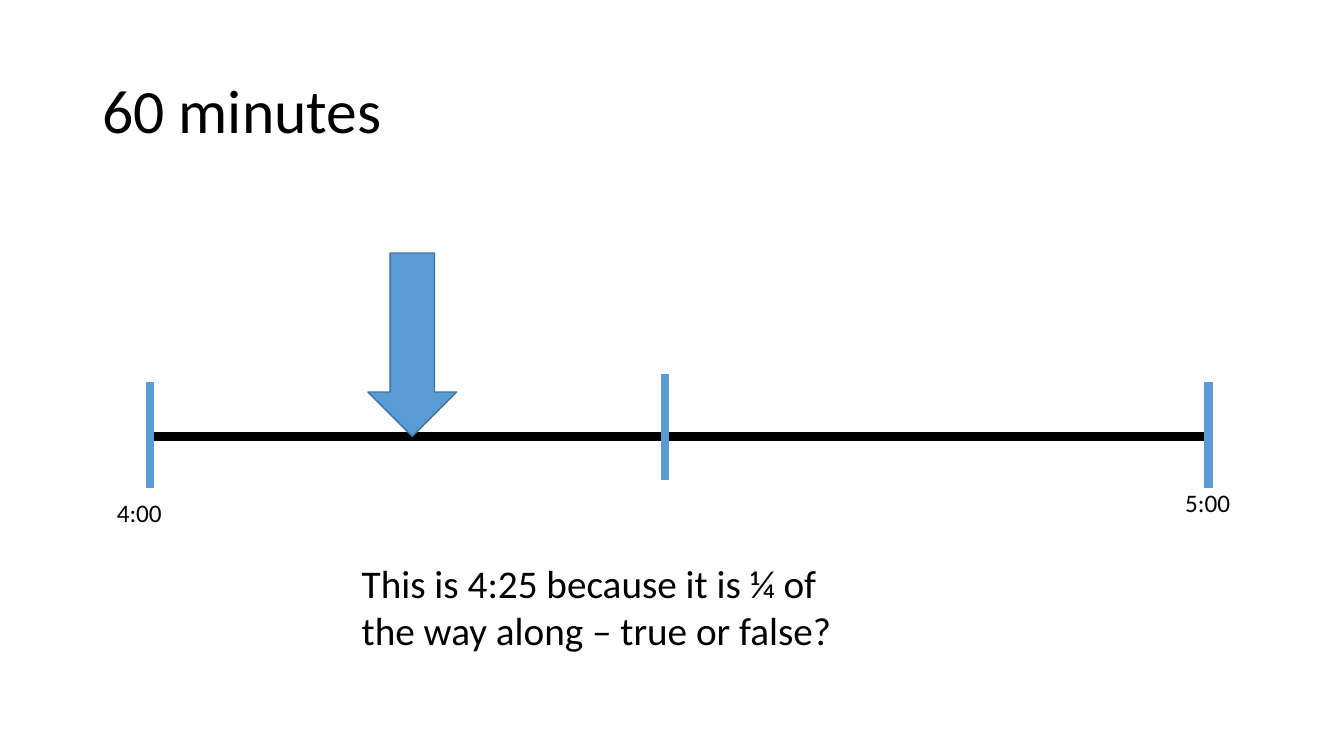
"""Build a slide with a one-hour number line and a true-or-false question."""
from lxml import etree
from pptx import Presentation
from pptx import util as u
from pptx.dml import color
from pptx.enum import shapes, text
from pptx.oxml import ns

BLACK, BLUE, DARK_BLUE = "000000", "5B9BD5", "43739E"
AXIS_Y = 311.75

deck = Presentation()
deck.slide_width, deck.slide_height = u.Pt(960), u.Pt(540)
page = deck.slides.add_slide(deck.slide_layouts[6])


def rgb(value):
    return color.RGBColor.from_string(value)


def add_line(x1, y1, x2, y2, colour):
    line = page.shapes.add_connector(
        shapes.MSO_CONNECTOR.STRAIGHT, u.Pt(x1), u.Pt(y1), u.Pt(x2), u.Pt(y2))
    line.line.color.rgb = rgb(colour)
    line.line.width = u.Pt(6)
    etree.SubElement(line._element.spPr, ns.qn("a:effectLst"))


add_line(107.3, AXIS_Y, 866.2, AXIS_Y, BLACK)
for x, top in [(107.3, 272.9), (475.2, 266.9), (863.3, 272.9)]:
    add_line(x, top, x, top + 76, BLUE)

arrow = page.shapes.add_shape(
    shapes.MSO_SHAPE.DOWN_ARROW, u.Pt(262.8), u.Pt(AXIS_Y - 131), u.Pt(63.4), u.Pt(131))
arrow.shadow.inherit = False
arrow.fill.solid()
arrow.fill.fore_color.rgb = rgb(BLUE)
arrow.line.color.rgb = rgb(DARK_BLUE)
arrow.line.width = u.Pt(1)

labels = [
    ("60 minutes", 66.2, 28.8, 828, 104.4, 44, True, text.MSO_ANCHOR.MIDDLE, 0.9),
    ("This is 4:25 because it is ¼ of the way along – true or false?",
     251.3, 396, 368.6, 74.9, 28, True, text.MSO_ANCHOR.TOP, 1.0),
    ("4:00", 76.3, 351.4, 46.8, 28.8, 18, False, text.MSO_ANCHOR.TOP, 1.0),
    ("5:00", 839.5, 344.9, 46.8, 28.8, 18, False, text.MSO_ANCHOR.TOP, 1.0),
]
for words, left, top, width, height, size, wrap, anchor, spacing in labels:
    box = page.shapes.add_textbox(u.Pt(left), u.Pt(top), u.Pt(width), u.Pt(height))
    box.text_frame.word_wrap = wrap
    box.text_frame.vertical_anchor = anchor
    para = box.text_frame.paragraphs[0]
    para.line_spacing = spacing
    span = para.add_run()
    span.text = words
    span.font.name = "Calibri"
    span.font.size = u.Pt(size)
    span.font.color.rgb = rgb(BLACK)

deck.save("out.pptx")
